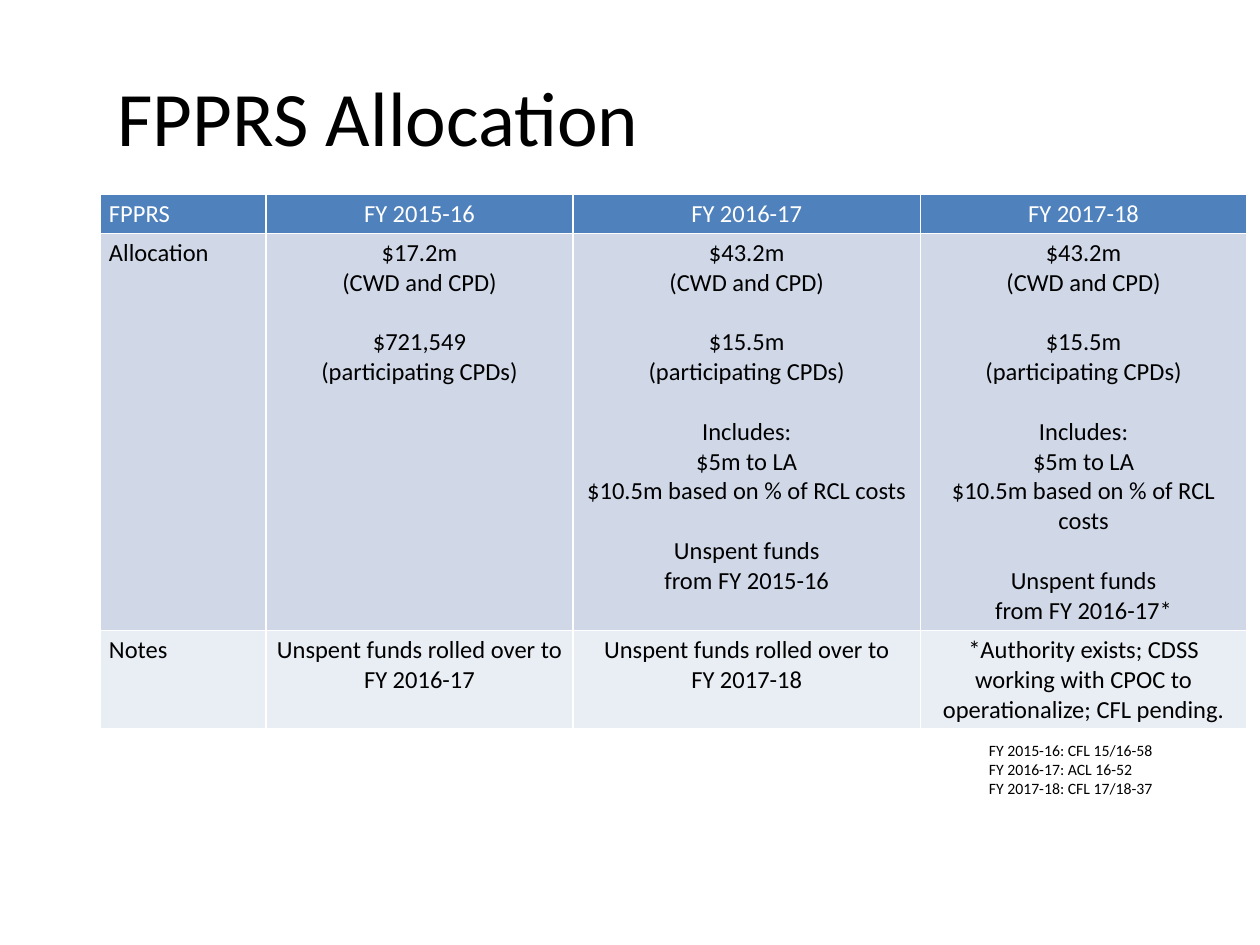
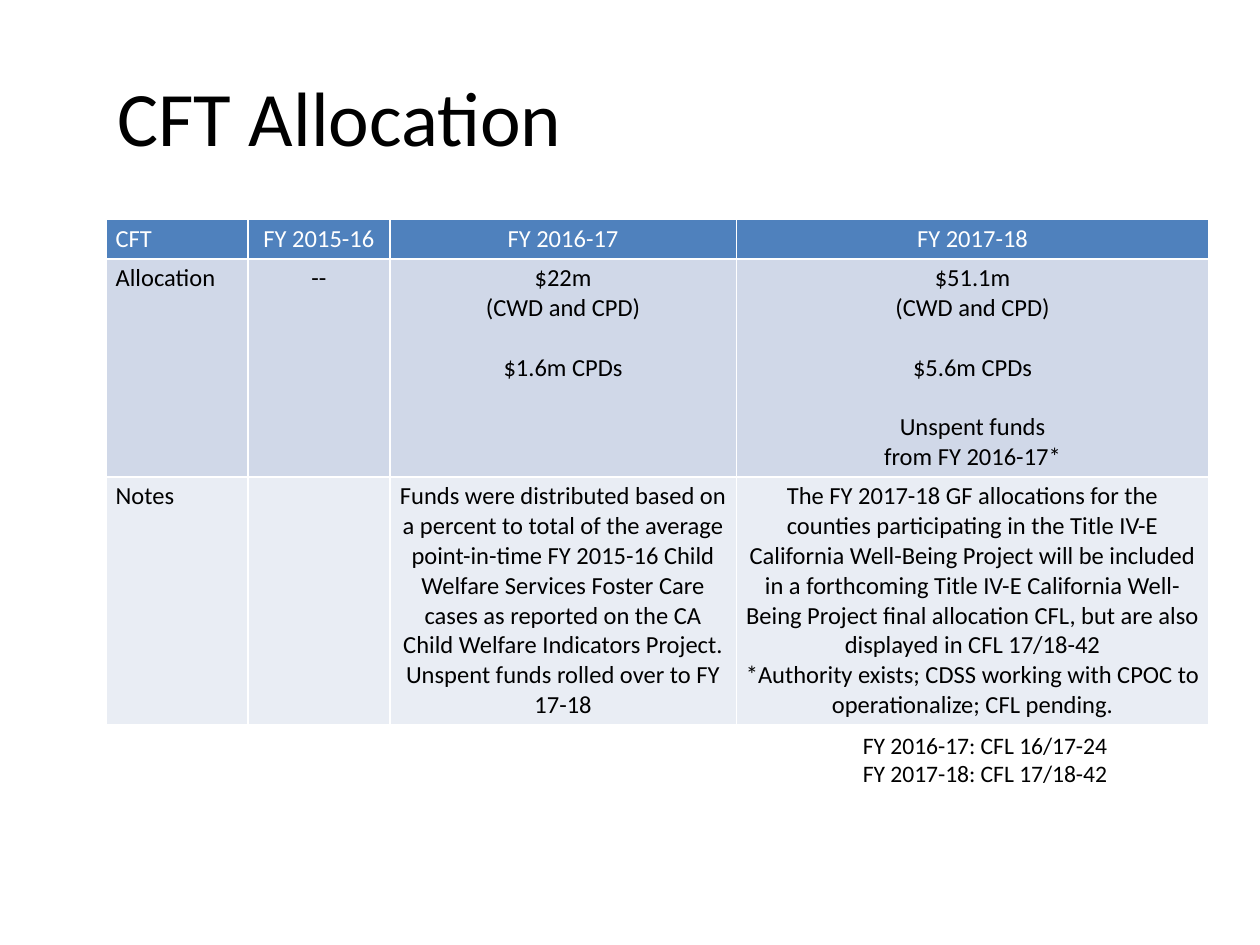
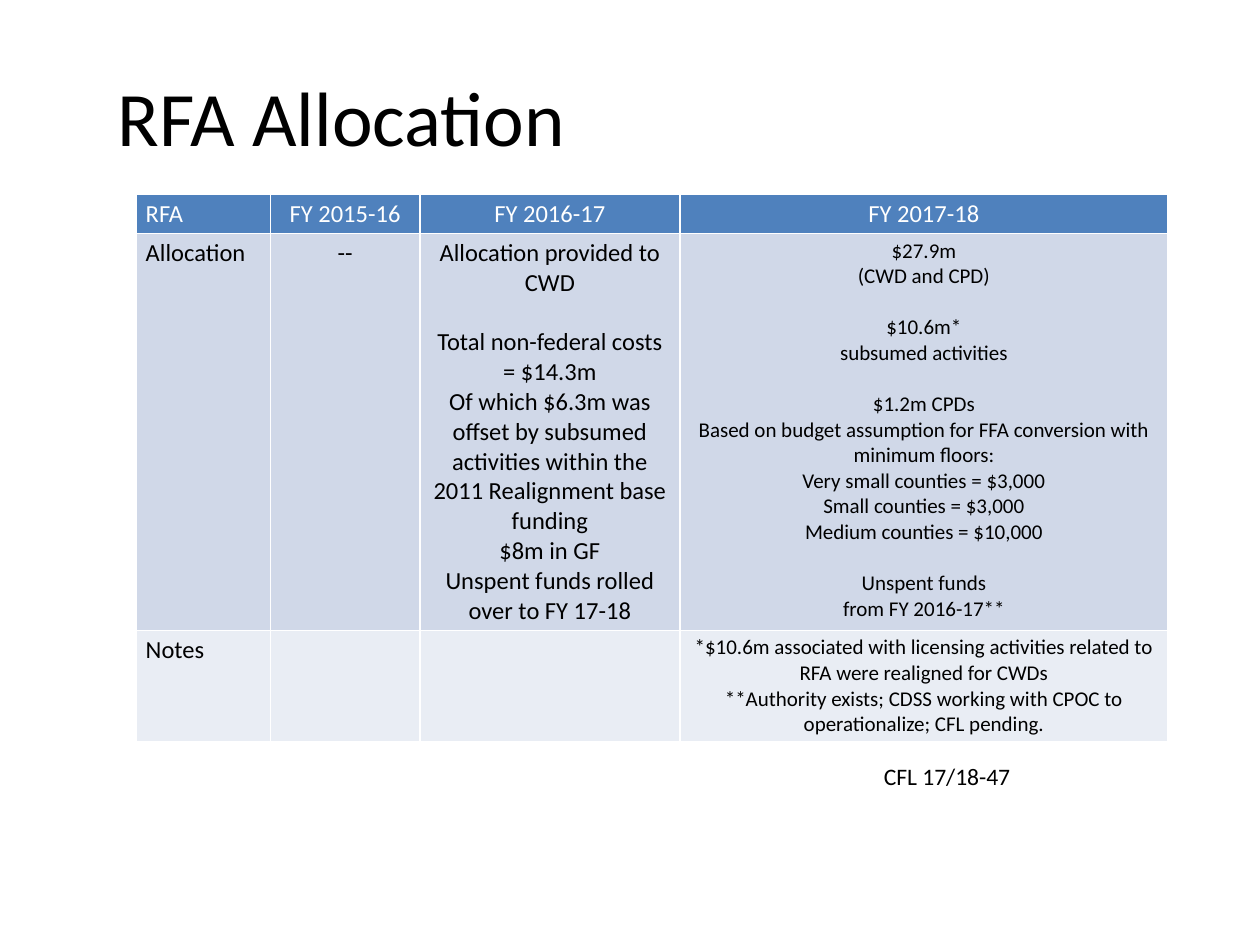
"""Build three slides of funding allocation tables by fiscal year."""
from pptx import Presentation
from pptx.dml.color import RGBColor
from pptx.enum.text import MSO_ANCHOR, MSO_AUTO_SIZE, PP_ALIGN
from pptx.util import Pt

LEFT, CENTER = PP_ALIGN.LEFT, PP_ALIGN.CENTER
MIDDLE = MSO_ANCHOR.MIDDLE
NO_FIT = MSO_AUTO_SIZE.NONE
FONT = "Calibri"
BLACK, WHITE = "000000", "FFFFFF"
ROW_FILLS = ["4F81BD", "D0D8E8", "E9EDF4"]
YEARS = ["FY 2015-16", "FY 2016-17", "FY 2017-18"]
LINE_HEIGHT = 1.22
PENDING = "Authority exists; CDSS working with CPOC to operationalize; CFL pending."
FPPRS_SHARED = """$43.2m
(CWD and CPD)

$15.5m
(participating CPDs)

Includes:
$5m to LA
$10.5m based on % of RCL costs

Unspent funds
"""

SLIDES = [
    {
        "program": "FPPRS",
        "table_at": (57, 111),
        "columns": [95, 175.5, 198.5, 186.5],
        "rows": [22.4, 226.8, 56],
        "allocation": [
            "$17.2m\n(CWD and CPD)\n\n$721,549\n(participating CPDs)",
            FPPRS_SHARED + "from FY 2015-16",
            FPPRS_SHARED + "from FY 2016-17*",
        ],
        "notes": [
            "Unspent funds rolled over to FY 2016-17",
            "Unspent funds rolled over to\nFY 2017-18",
            "*" + PENDING,
        ],
        "last_column_size": 14,
        "sources": "FY 2015-16: CFL 15/16-58\nFY 2016-17: ACL 16-52\nFY 2017-18: CFL 17/18-37",
        "sources_at": (558, 420, 114, 40),
        "sources_size": 9,
    },
    {
        "program": "CFT",
        "table_at": (60.8, 125.5),
        "columns": [81, 81, 198, 270],
        "rows": [22.4, 124.3, 141.5],
        "allocation": [
            "--",
            "$22m\n(CWD and CPD)\n\n$1.6m CPDs",
            "$51.1m\n(CWD and CPD)\n\n$5.6m CPDs\n\nUnspent funds\nfrom FY 2016-17*",
        ],
        "notes": [
            "",
            "Funds were distributed based on a percent to total of the average "
            "point-in-time FY 2015-16 Child Welfare Services Foster Care cases as "
            "reported on the CA Child Welfare Indicators Project.\n"
            "Unspent funds rolled over to FY 17-18",
            "The FY 2017-18 GF allocations for the counties participating in the "
            "Title IV-E California Well-Being Project will be included in a "
            "forthcoming Title IV-E California Well-Being Project final allocation "
            "CFL, but are also displayed in CFL 17/18-42\n*" + PENDING,
        ],
        "last_column_size": 14,
        "sources": "FY 2016-17: CFL 16/17-24\nFY 2017-18: CFL 17/18-42",
        "sources_at": (486, 414, 184, 40),
        "sources_size": 13.5,
    },
    {
        "program": "RFA",
        "table_at": (78, 111),
        "columns": [76.5, 85.5, 148.5, 279],
        "rows": [22.4, 226.8, 63.5],
        "allocation": [
            "--",
            "Allocation provided to CWD\n\n"
            "Total non-federal costs = $14.3m\n"
            "Of which $6.3m was offset by subsumed activities within the "
            "2011 Realignment base funding\n"
            "$8m in GF\nUnspent funds rolled over to FY 17-18",
            "$27.9m\n(CWD and CPD)\n\n$10.6m*\nsubsumed activities\n\n$1.2m CPDs\n"
            "Based on budget assumption for FFA conversion with minimum floors:\n"
            "Very small counties = $3,000\nSmall counties = $3,000\n"
            "Medium counties = $10,000\n\nUnspent funds\nfrom FY 2016-17**",
        ],
        "notes": [
            "",
            "",
            "*$10.6m associated with licensing activities related to RFA were "
            "realigned for CWDs\n**" + PENDING,
        ],
        "last_column_size": 12,
        "sources": "CFL 17/18-47",
        "sources_at": (498, 432, 96, 24),
        "sources_size": 13.5,
    },
]


def rgb(value):
    """Turn a hex string into a colour."""
    return RGBColor.from_string(value)


def write(frame, text, size, color=BLACK, align=LEFT):
    """Fill a text frame line by line, turning an empty line into space before the next."""
    frame.word_wrap = True
    gap = 0
    for index, line in enumerate(text.split("\n")):
        if index and not line:
            gap = size * LINE_HEIGHT
            continue
        para = frame.add_paragraph() if index else frame.paragraphs[0]
        para.text = line
        para.alignment = align
        para.space_before = Pt(gap)
        para.font.name = FONT
        para.font.size = Pt(size)
        para.font.bold = False
        para.font.color.rgb = rgb(color)
        gap = 0


deck = Presentation()
deck.slide_width, deck.slide_height = Pt(720), Pt(540)

for content in SLIDES:
    page = deck.slides.add_slide(deck.slide_layouts[5])
    title = page.shapes.title
    title.left, title.top, title.width, title.height = Pt(60), Pt(21), Pt(636), Pt(90)
    title.text_frame.auto_size = NO_FIT
    title.text_frame.vertical_anchor = MIDDLE
    write(title.text_frame, content["program"] + " Allocation", 44)

    columns, rows = content["columns"], content["rows"]
    left, top = content["table_at"]
    table = page.shapes.add_table(
        len(rows), len(columns), Pt(left), Pt(top), Pt(sum(columns)), Pt(sum(rows))
    ).table
    for column, width in zip(table.columns, columns):
        column.width = Pt(width)

    grid = [
        [content["program"], *YEARS],
        ["Allocation", *content["allocation"]],
        ["Notes", *content["notes"]],
    ]
    for row_index, texts in enumerate(grid):
        table.rows[row_index].height = Pt(rows[row_index])
        for column_index, text in enumerate(texts):
            cell = table.cell(row_index, column_index)
            cell.margin_left = cell.margin_right = Pt(5.3)
            cell.margin_top = cell.margin_bottom = Pt(2.65)
            cell.fill.solid()
            cell.fill.fore_color.rgb = rgb(ROW_FILLS[row_index])
            is_small = row_index > 0 and column_index == len(columns) - 1
            write(
                cell.text_frame,
                text,
                content["last_column_size"] if is_small else 14,
                BLACK if row_index else WHITE,
                CENTER if column_index else LEFT,
            )

    box = page.shapes.add_textbox(*[Pt(length) for length in content["sources_at"]])
    write(box.text_frame, content["sources"], content["sources_size"])

deck.save("out.pptx")
